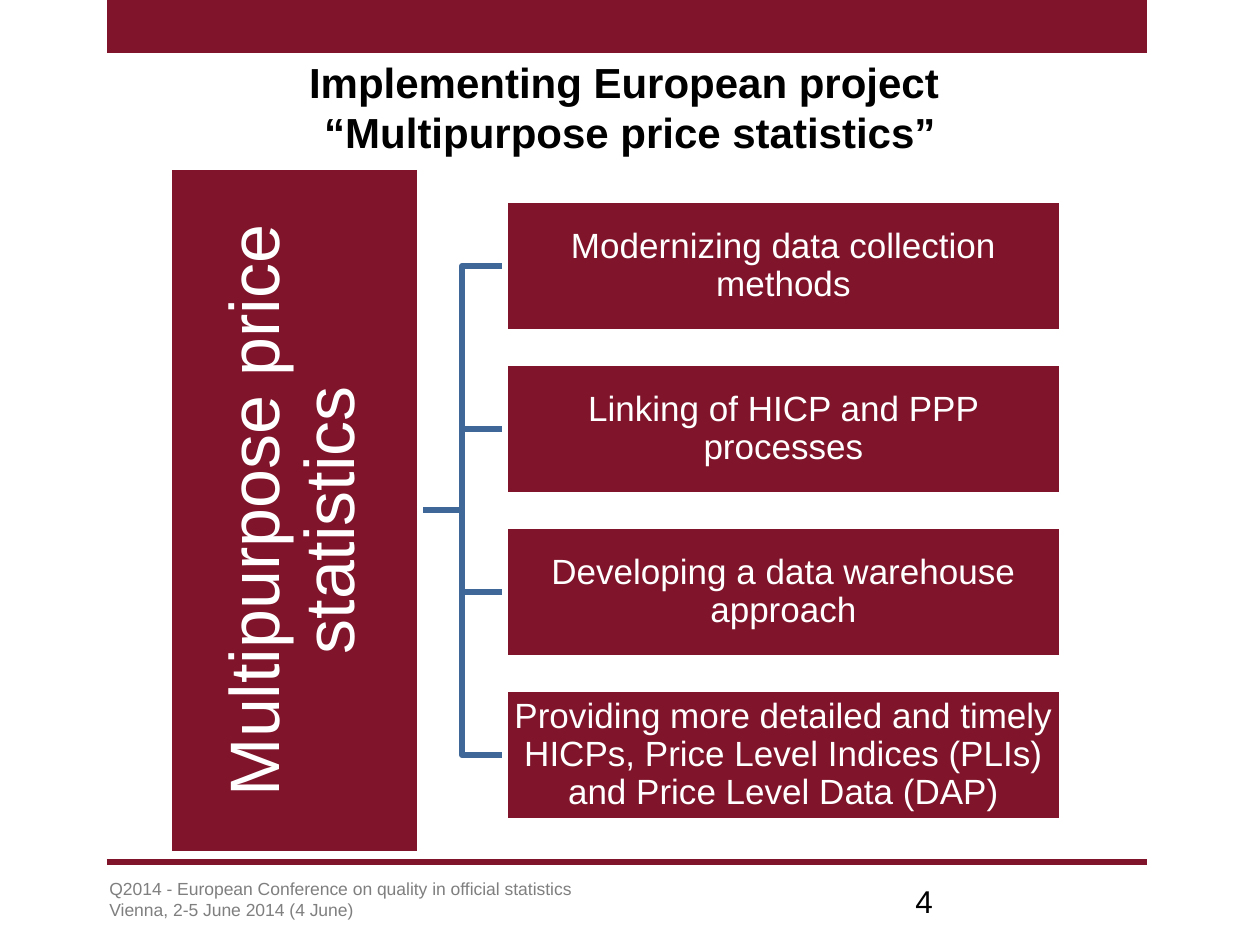
from lxml import etree
from pptx import Presentation
from pptx.dml.color import RGBColor
from pptx.enum.shapes import MSO_CONNECTOR, MSO_SHAPE
from pptx.enum.text import MSO_ANCHOR, PP_ALIGN
from pptx.oxml.ns import qn
from pptx.util import Pt

EMU_PER_PX = 914400 / 126
RECTANGLE = MSO_SHAPE.RECTANGLE
STRAIGHT = MSO_CONNECTOR.STRAIGHT
CENTER, LEFT = PP_ALIGN.CENTER, PP_ALIGN.LEFT
MIDDLE, TOP = MSO_ANCHOR.MIDDLE, MSO_ANCHOR.TOP
WINE, BLUE, WHITE, GRAY, BLACK = "7F142A", "3F6797", "FFFFFF", "7F7F7F", "000000"
LINE_WIDTH = Pt(3.35)
BRANCHES = [
    "Modernizing data collection methods",
    "Linking of HICP and PPP processes",
    "Developing a data warehouse approach",
    "Providing more detailed and timely HICPs, Price Level Indices (PLIs) and Price Level Data (DAP)",
]


def px(length):
    """Turn pixels into EMU."""
    return round(length * EMU_PER_PX)


def color(hex_code):
    """Turn a hex string into a colour."""
    return RGBColor.from_string(hex_code)


def stroke(item, hex_code):
    """Give a shape or connector the common line style."""
    item.line.color.rgb = color(hex_code)
    item.line.width = LINE_WIDTH


def write(shape, text, size, hex_code, align=LEFT, anchor=TOP, bold=False, spacing=None, inset=None):
    """Fill a shape with text in one style."""
    frame = shape.text_frame
    frame.word_wrap = True
    frame.vertical_anchor = anchor
    if inset is not None:
        frame.margin_left = frame.margin_right = px(inset)
        frame.margin_top = frame.margin_bottom = px(inset)
    frame.text = text
    for para in frame.paragraphs:
        para.alignment = align
        if spacing:
            para.line_spacing = spacing
        for span in para.runs:
            span.font.name = "Arial"
            span.font.size = Pt(size)
            span.font.bold = bold
            span.font.color.rgb = color(hex_code)
    return frame


def add_text(page, left, top, width, height, text, size, hex_code, **style):
    """Add a text box and return its frame."""
    box = page.shapes.add_textbox(px(left), px(top), px(width), px(height))
    return write(box, text, size, hex_code, **style)


def add_panel(page, left, top, width, height):
    """Add a plain wine-red rectangle."""
    panel = page.shapes.add_shape(RECTANGLE, px(left), px(top), px(width), px(height))
    panel.shadow.inherit = False
    panel.fill.solid()
    panel.fill.fore_color.rgb = color(WINE)
    panel.line.fill.background()
    return panel


def add_node(page, left, top, width, height, text, size, inset):
    """Add a white-edged hierarchy node with centred text."""
    node = add_panel(page, left, top, width, height)
    stroke(node, WHITE)
    write(node, text, size, WHITE, align=CENTER, anchor=MIDDLE, spacing=0.9, inset=inset)
    return node


def add_elbow(page, left, start, right, end):
    """Draw a right-angled link between two nodes."""
    middle = (left + right) / 2
    builder = page.shapes.build_freeform(left, start, scale=EMU_PER_PX)
    builder.add_line_segments([(middle, start), (middle, end), (right, end)], close=False)
    elbow = builder.convert_to_shape()
    elbow.shadow.inherit = False
    elbow.fill.background()
    stroke(elbow, BLUE)


def add_header(page, left, top, width):
    """Add the top band and the title."""
    add_panel(page, left, top, width, 53)
    title = "Implementing European project \v“Multipurpose price statistics”"
    add_text(page, left - 44, top + 47, width + 94, 119, title, 24, BLACK,
             align=CENTER, anchor=MIDDLE, bold=True)


def add_hierarchy(page, left, top, height):
    """Add the upright root, its four branches and their links."""
    root_width, branch_width, branch_height, pitch = 251, 557, 131, 163
    branch_left = left + 336
    middle = top + height / 2
    first_top = middle - (pitch * (len(BRANCHES) - 1) + branch_height) / 2
    tops = [first_top + pitch * index for index in range(len(BRANCHES))]
    for branch_top in reversed(tops):
        add_elbow(page, left + root_width, middle, branch_left, branch_top + branch_height / 2)
    root = add_node(page, left + (root_width - height) / 2, middle - root_width / 2,
                    height, root_width, "Multipurpose price statistics ", 40, 4)
    root.rotation = 270
    for branch_top, text in zip(tops, BRANCHES):
        add_node(page, branch_left, branch_top, branch_width, branch_height, text, 20, 1)


def add_footer(page, left, top, width):
    """Add the bottom rule, the conference note and the page number."""
    rule = page.shapes.add_connector(STRAIGHT, px(left), px(top), px(left + width), px(top))
    stroke(rule, WINE)
    etree.SubElement(rule._element.spPr, qn("a:effectLst"))
    note = "Q2014 - European Conference on quality in official statistics\nVienna, 2-5 June 2014 (4 June)"
    frame = add_text(page, left - 10, top + 16, 965, 49, note, 10, GRAY)
    frame.paragraphs[0].line_spacing = 0.7
    add_text(page, left + 796, top + 14, 294, 50, "4", 18, BLACK)


def main():
    """Build the slide and save it."""
    deck = Presentation()
    deck.slide_width, deck.slide_height = px(1260), px(945)
    page = deck.slides.add_slide(deck.slide_layouts[6])
    add_header(page, 107, 0, 1040)
    add_hierarchy(page, 169, 167, 687)
    add_footer(page, 107, 862, 1040)
    deck.save("out.pptx")


if __name__ == "__main__":
    main()
